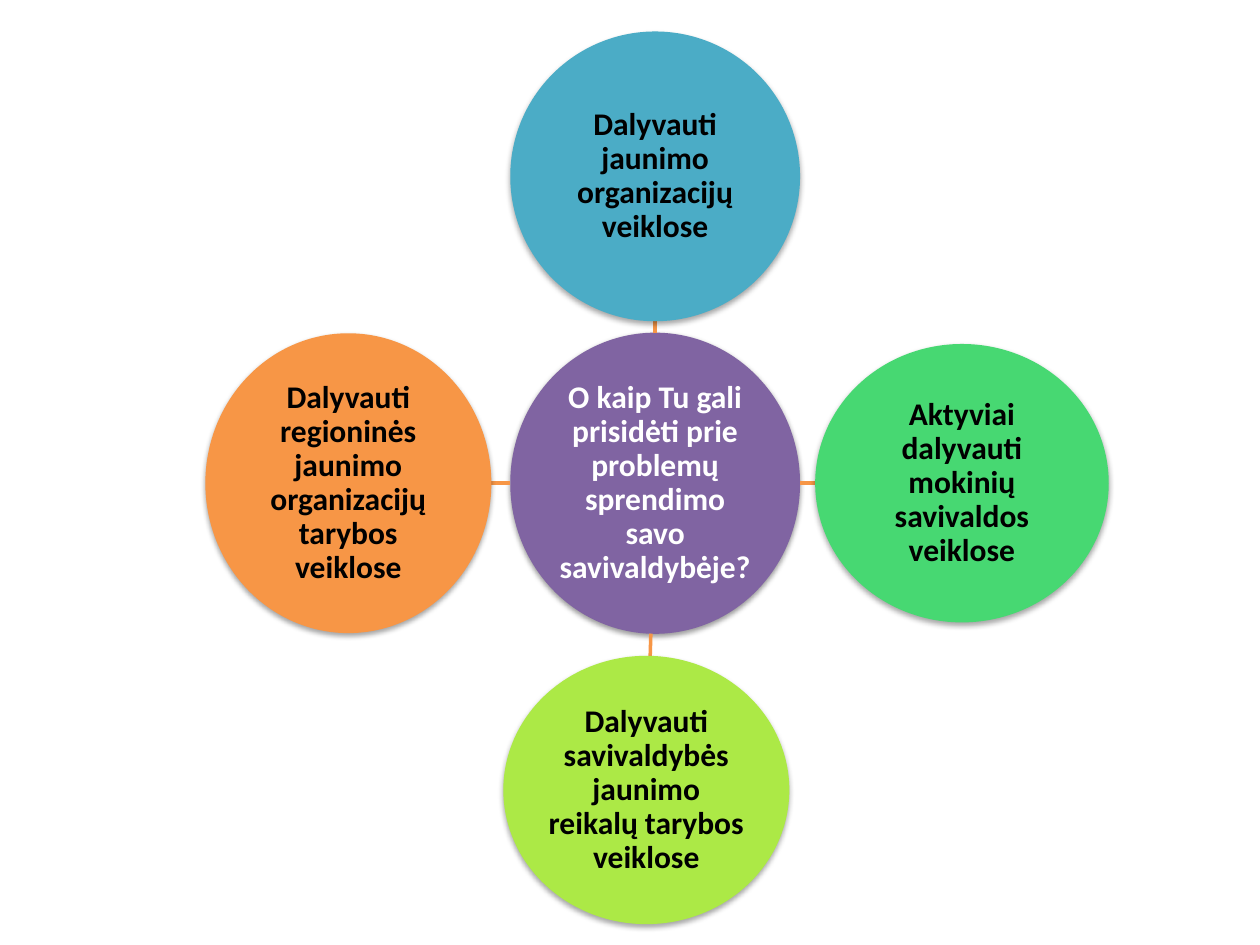
from dataclasses import dataclass
from math import hypot

from lxml import etree
from pptx import Presentation
from pptx import util as u
from pptx.dml.color import RGBColor
from pptx.enum import shapes, text
from pptx.oxml import ns

# Grid: 1000 columns by 750 rows of square cells
WIDTH, HEIGHT = u.Inches(10), u.Inches(7.5)
CELL = WIDTH / 1000
HUB_X, HUB_Y = 520, 383.5
STEP = 243.5  # from the hub's centre to each outer centre

COLORS = {
    "purple": "8064A2", "teal": "4BACC6", "green": "47D872",
    "lime": "ACE946", "orange": "F79646",
    "white": "FFFFFF", "black": "000000",
}


@dataclass
class Circle:
    label: str
    fill: str
    x: float  # centre column
    y: float  # centre row
    w: float
    h: float
    ink: str = "black"
    shadow_alpha: int = 35
    shadow_dist: float = 1.8


HUB = Circle("O kaip Tu gali prisidėti prie problemų sprendimo savo savivaldybėje?",
             "purple", HUB_X, HUB_Y, 230, 239, "white", 38, 1.6)
SPOKES = [
    Circle("Dalyvauti jaunimo organizacijų veiklose",
           "teal", HUB_X, HUB_Y - STEP, 230, 230),
    Circle("Aktyviai dalyvauti mokinių savivaldos veiklose",
           "green", HUB_X + STEP, HUB_Y, 233, 221),
    Circle("Dalyvauti savivaldybės jaunimo reikalų tarybos veiklose",
           "lime", HUB_X - 7, HUB_Y + STEP, 227, 213),
    Circle("Dalyvauti regioninės jaunimo organizacijų tarybos veiklose",
           "orange", HUB_X - STEP, HUB_Y, 227, 238),
]


def cells(n: float) -> int:
    return round(n * CELL)


def color(name: str) -> RGBColor:
    return RGBColor.from_string(COLORS[name])


def edge_toward(a: Circle, b: Circle) -> tuple[int, int]:
    """Point where the line from a to b leaves the outline of a."""
    dx, dy = b.x - a.x, b.y - a.y
    t = 1 / hypot(dx / (a.w / 2), dy / (a.h / 2))
    return cells(a.x + t * dx), cells(a.y + t * dy)


def add_shadow(sp, alpha: int, dist: float) -> None:
    effects = etree.SubElement(sp._element.spPr, ns.qn("a:effectLst"))
    shadow = etree.SubElement(
        effects, ns.qn("a:outerShdw"), blurRad=str(u.Pt(3.1)),
        dist=str(u.Pt(dist)), dir="5400000", rotWithShape="0")
    clr = etree.SubElement(shadow, ns.qn("a:srgbClr"), val=COLORS["black"])
    etree.SubElement(clr, ns.qn("a:alpha"), val=str(alpha * 1000))


def add_circle(s, c: Circle) -> None:
    sp = s.shapes.add_shape(
        shapes.MSO_SHAPE.OVAL, cells(c.x - c.w / 2), cells(c.y - c.h / 2),
        cells(c.w), cells(c.h))
    sp.fill.solid()
    sp.fill.fore_color.rgb = color(c.fill)
    sp.line.fill.background()
    add_shadow(sp, c.shadow_alpha, c.shadow_dist)

    tf = sp.text_frame
    tf.word_wrap = True
    tf.vertical_anchor = text.MSO_ANCHOR.MIDDLE
    tf.margin_left = tf.margin_right = tf.margin_top = tf.margin_bottom = u.Inches(0.01)
    p = tf.paragraphs[0]
    p.alignment = text.PP_ALIGN.CENTER
    p.line_spacing = 0.9
    r = p.add_run()
    r.text = c.label
    r.font.name = "Calibri"
    r.font.size = u.Pt(18)
    r.font.bold = True
    r.font.color.rgb = color(c.ink)


def add_link(s, a: Circle, b: Circle) -> None:
    cx = s.shapes.add_connector(
        shapes.MSO_CONNECTOR.STRAIGHT, *edge_toward(a, b), *edge_toward(b, a))
    cx.line.color.rgb = color("orange")
    cx.line.width = u.Pt(2)
    etree.SubElement(cx._element.spPr, ns.qn("a:effectLst"))


def main() -> None:
    prs = Presentation()
    prs.slide_width, prs.slide_height = WIDTH, HEIGHT
    s = prs.slides.add_slide(prs.slide_layouts[6])

    # Hub first, then each spoke with its link
    add_circle(s, HUB)
    for spoke in SPOKES:
        add_link(s, HUB, spoke)
        add_circle(s, spoke)

    prs.save("out.pptx")


if __name__ == "__main__":
    main()
